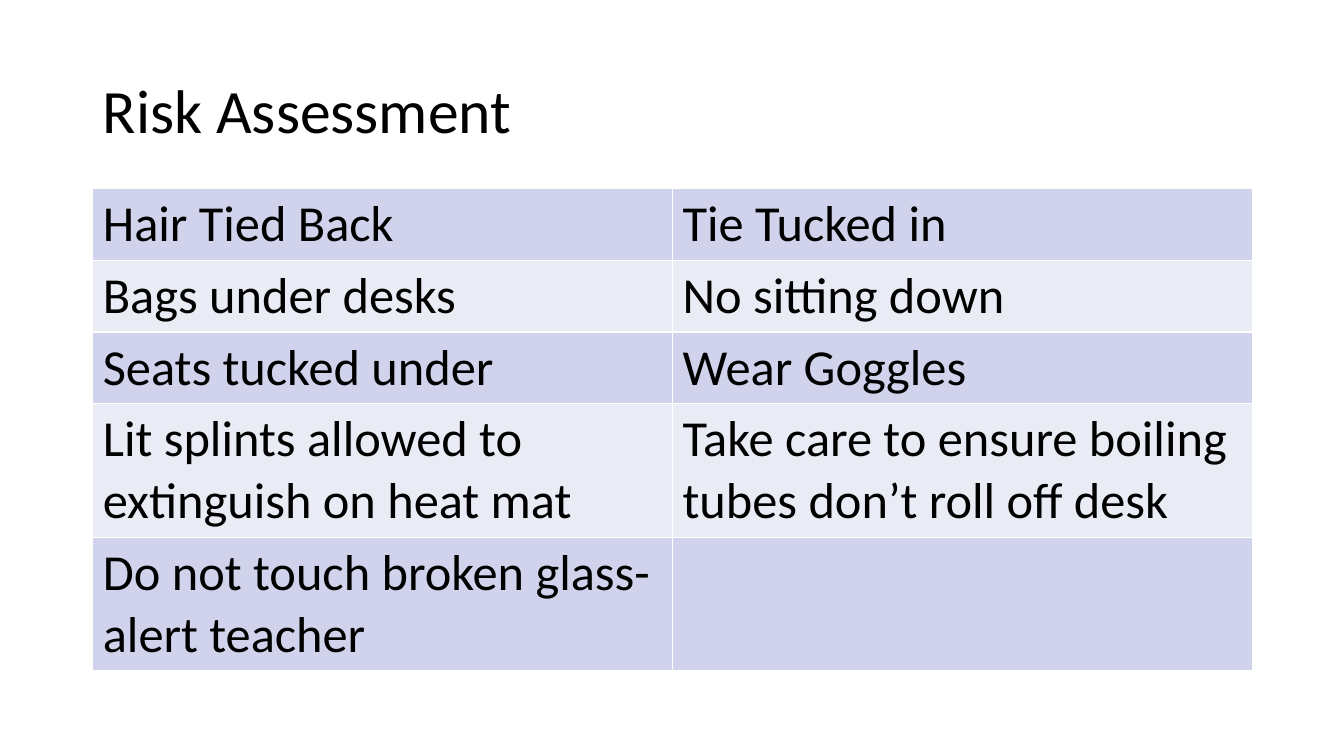
from typing import NamedTuple

from lxml import etree
from pptx import Presentation
from pptx.dml.color import RGBColor
from pptx.enum.text import MSO_ANCHOR, PP_ALIGN
from pptx.oxml.ns import qn
from pptx.util import Inches, Pt

MIDDLE = MSO_ANCHOR.MIDDLE
LEFT = PP_ALIGN.LEFT

BLACK = RGBColor(0x00, 0x00, 0x00)
WHITE = RGBColor(0xFF, 0xFF, 0xFF)
BAND_DARK = RGBColor(0xD0, 0xD3, 0xEB)
BAND_LIGHT = RGBColor(0xE9, 0xEB, 0xF5)
FONT = "Calibri"
MARGIN = 0.92
WIDTH = 11.5


class RiskRow(NamedTuple):
    left: str
    right: str
    height: float


ONE_LINE = 0.71
TWO_LINES = 1.32
ROWS = [
    RiskRow("Hair Tied Back", "Tie Tucked in", ONE_LINE),
    RiskRow("Bags under desks", "No sitting down", ONE_LINE),
    RiskRow("Seats tucked under", "Wear Goggles", ONE_LINE),
    RiskRow("Lit splints allowed to extinguish on heat mat",
            "Take care to ensure boiling tubes don’t roll off desk", TWO_LINES),
    RiskRow("Do not touch broken glass- alert teacher", "", TWO_LINES),
]


def set_font(p, size: int) -> None:
    p.font.name = FONT
    p.font.size = Pt(size)
    p.font.color.rgb = BLACK


def set_borders(cell, color: RGBColor) -> None:
    tcPr = cell._tc.get_or_add_tcPr()
    for i, side in enumerate(("lnL", "lnR", "lnT", "lnB")):
        ln = etree.Element(qn(f"a:{side}"), w=str(Pt(1)))
        fill = etree.SubElement(ln, qn("a:solidFill"))
        etree.SubElement(fill, qn("a:srgbClr"), val=str(color))
        tcPr.insert(i, ln)


def add_title(s, text: str) -> None:
    title = s.shapes.title
    title.left, title.top = Inches(MARGIN), Inches(0.4)
    title.width, title.height = Inches(WIDTH), Inches(1.45)
    tf = title.text_frame
    tf.text = text
    tf.vertical_anchor = MIDDLE
    p = tf.paragraphs[0]
    p.alignment = LEFT
    p.line_spacing = 0.9
    set_font(p, 44)


def add_risk_table(s, rows: list[RiskRow]) -> None:
    height = sum(row.height for row in rows)
    table = s.shapes.add_table(len(rows), 2, Inches(MARGIN), Inches(1.87),
                               Inches(WIDTH), Inches(height)).table
    table.first_row = False
    table.horz_banding = False
    for r, row in enumerate(rows):
        table.rows[r].height = Inches(row.height)
        for c, text in enumerate((row.left, row.right)):
            cell = table.cell(r, c)
            cell.text = text
            cell.fill.solid()
            cell.fill.fore_color.rgb = BAND_LIGHT if r % 2 else BAND_DARK
            set_borders(cell, WHITE)
            set_font(cell.text_frame.paragraphs[0], 36)


def main() -> None:
    prs = Presentation()
    prs.slide_width, prs.slide_height = Inches(13.33), Inches(7.5)
    s = prs.slides.add_slide(prs.slide_layouts[5])
    add_title(s, "Risk Assessment")
    add_risk_table(s, ROWS)
    prs.save("out.pptx")


if __name__ == "__main__":
    main()
